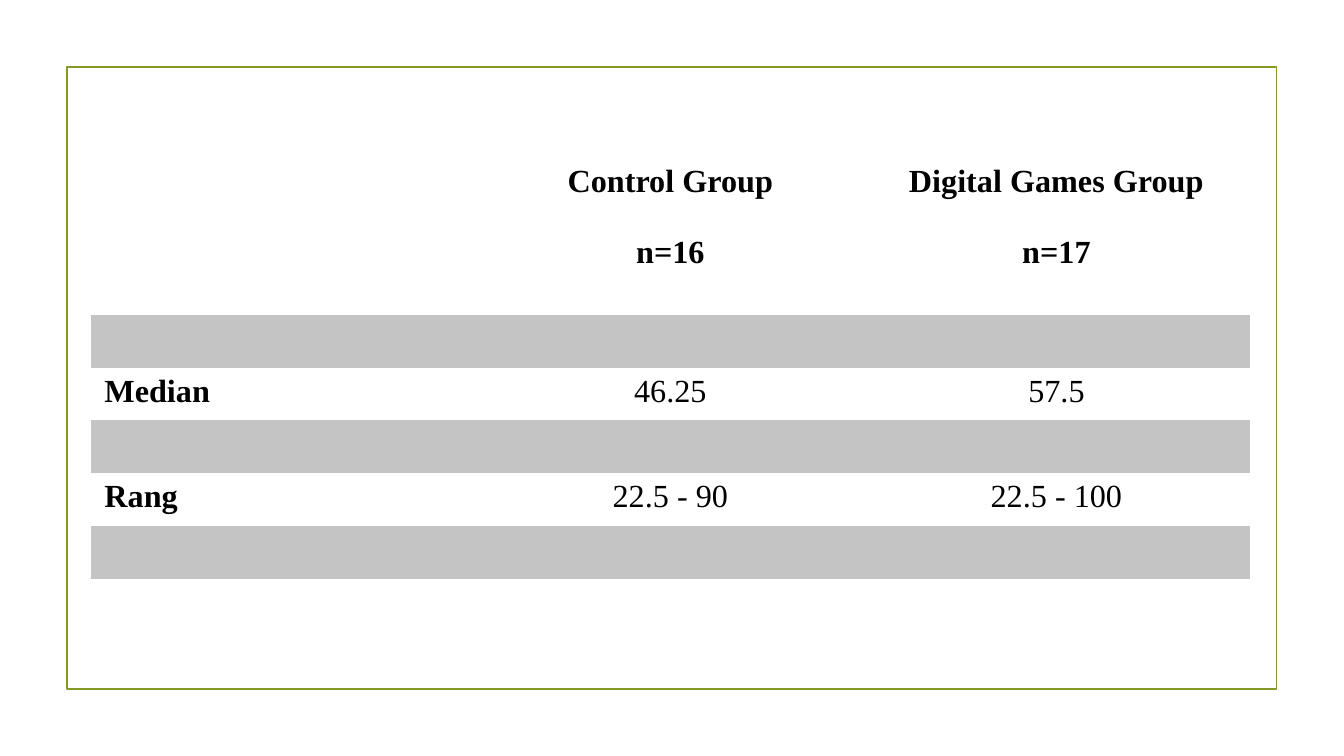
from pptx import Presentation
from pptx.dml.color import RGBColor
from pptx.enum.shapes import MSO_SHAPE
from pptx.enum.text import PP_ALIGN
from pptx.oxml.ns import qn
from pptx.util import Pt

RECT = MSO_SHAPE.RECTANGLE
LEFT, MID = PP_ALIGN.LEFT, PP_ALIGN.CENTER
COLORS = {"frame": "83992A", "band": "C4C4C4", "text": "000000"}
PLAIN = "{2D5ABB26-0587-4C30-8999-92F81FD0307C}"
INSETS = {
    "margin_left": Pt(9.4), "margin_right": Pt(9.4),
    "margin_top": Pt(4.3), "margin_bottom": Pt(4.3),
}
FONT = {"name": "Times New Roman", "size": Pt(23)}
ROWS = [
    ["", "Control Group\nn=16", "Digital Games Group\nn=17"],
    ["", "", ""],
    ["Median", "46.25", "57.5"],
    ["", "", ""],
    ["Rang", "22.5 - 90", "22.5 - 100"],
    ["", "", ""],
]
HEAD, ROW, COL = 112, 37.7, 275.8


def paint(fill, name):
    fill.solid()
    fill.fore_color.rgb = RGBColor.from_string(COLORS[name])


deck = Presentation()
deck.slide_width, deck.slide_height = Pt(960), Pt(540)
slide = deck.slides.add_slide(deck.slide_layouts[6])

frame = slide.shapes.add_shape(RECT, Pt(47.8), Pt(48), Pt(864), Pt(444.4))
frame.shadow.inherit = False
frame.fill.background()
paint(frame.line.fill, "frame")
frame.line.width = Pt(1.25)

holder = slide.shapes.add_table(
    len(ROWS), 3, Pt(65.2), Pt(113), Pt(3 * COL), Pt(HEAD + 5 * ROW)
)
table = holder.table
table.first_row = table.horz_banding = False
for style in holder.element.iter(qn("a:tableStyleId")):
    style.text = PLAIN
for col in table.columns:
    col.width = Pt(COL)

for r, row in enumerate(ROWS):
    table.rows[r].height = Pt(ROW if r else HEAD)
    for c, text in enumerate(row):
        cell = table.cell(r, c)
        for key, value in INSETS.items():
            setattr(cell, key, value)
        if r % 2:
            paint(cell.fill, "band")
        else:
            cell.fill.background()
        cell.text = text
        for i, para in enumerate(cell.text_frame.paragraphs):
            para.alignment = MID if c else LEFT
            if i:
                para.space_before = Pt(25)
            for run in para.runs:
                for key, value in FONT.items():
                    setattr(run.font, key, value)
                run.font.bold = r == 0 or c == 0
                paint(run.font.fill, "text")

deck.save("out.pptx")
